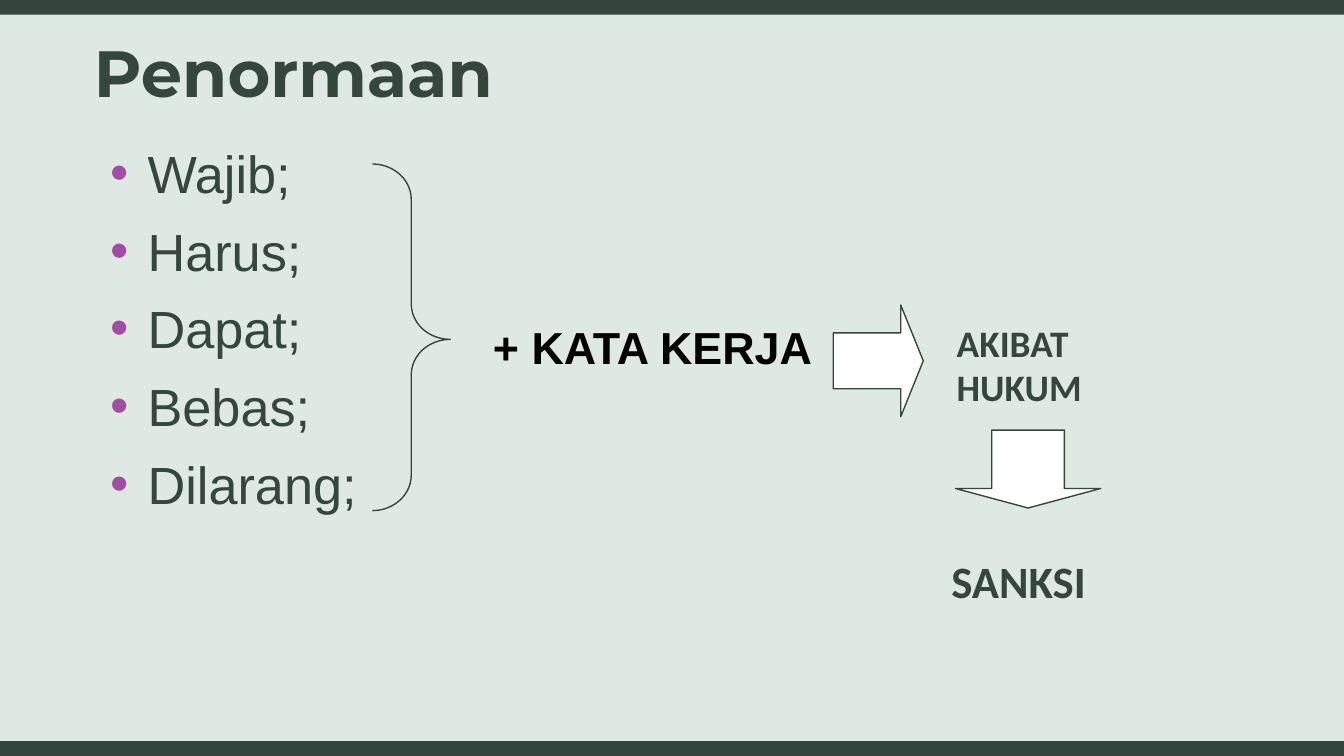
from lxml import etree
from pptx import Presentation
from pptx import util as u
from pptx.dml import color
from pptx.enum import shapes, text
from pptx.oxml import ns

HUES = {
    "back": "DEE9E3",
    "dark": "35463D",
    "dot": "A04DA3",
    "white": "FFFFFF",
    "black": "000000",
}
KIND = shapes.MSO_SHAPE
WIDE = 10
HIGH = WIDE * 9 / 16
BAR = 0.11


def hue(name):
    return color.RGBColor.from_string(HUES[name])


class Deck:
    def __init__(self):
        self.file = Presentation()
        self.file.slide_width = u.Inches(WIDE)
        self.file.slide_height = u.Inches(HIGH)
        self.slide = self.file.slides.add_slide(self.file.slide_layouts[6])
        fill = self.slide.background.fill
        fill.solid()
        fill.fore_color.rgb = hue("back")

    def shape(self, kind, box, fill=None, line=None, bends=()):
        item = self.slide.shapes.add_shape(kind, *map(u.Inches, box))
        item.shadow.inherit = False
        for i, bend in enumerate(bends):
            item.adjustments[i] = bend
        if fill:
            item.fill.solid()
            item.fill.fore_color.rgb = hue(fill)
        else:
            item.fill.background()
        if line:
            item.line.color.rgb = hue(line)
            item.line.width = u.Pt(0.75)
        else:
            item.line.fill.background()

    def arrow(self, kind, box):
        self.shape(kind, box, "white", "dark", (0.5, 0.25))

    def text(self, box, lines, size, font, tint="dark", bold=True,
             wrap=False, pad=0.05):
        frame = self.slide.shapes.add_textbox(*map(u.Inches, box)).text_frame
        frame.word_wrap = wrap
        frame.auto_size = (text.MSO_AUTO_SIZE.NONE if wrap
                           else text.MSO_AUTO_SIZE.SHAPE_TO_FIT_TEXT)
        frame.margin_top = frame.margin_bottom = u.Inches(pad)
        for i, line in enumerate(lines):
            para = frame.add_paragraph() if i else frame.paragraphs[0]
            run = para.add_run()
            run.text = line
            run.font.size = u.Pt(size)
            run.font.name = font
            run.font.bold = bold
            run.font.color.rgb = hue(tint)
        return frame

    def list(self, box, lines, size, font):
        frame = self.text(box, lines, size, font, bold=False, wrap=True, pad=0.1)
        for para in frame.paragraphs:
            para.line_spacing = 1.15
            para.space_before = u.Pt(3)
            props = para._p.get_or_add_pPr()
            props.set("marL", str(u.Inches(0.4)))
            props.set("indent", str(u.Inches(-0.28)))
            tint = etree.SubElement(props, ns.qn("a:buClr"))
            etree.SubElement(tint, ns.qn("a:srgbClr"), val=HUES["dot"])
            etree.SubElement(props, ns.qn("a:buFont"), typeface="Arial")
            etree.SubElement(props, ns.qn("a:buChar"), char="•")


def main():
    deck = Deck()
    for top in (HIGH - BAR, 0):
        deck.shape(KIND.RECTANGLE, (0, top, WIDE, BAR), "dark")

    deck.text((0.6, 0.14, 4.7, 0.74), ["Penormaan"], 35, "Montserrat",
              wrap=True, pad=0.1)
    norms = ["Wajib;", "Harus;", "Dapat;", "Bebas;", "Dilarang;"]
    deck.list((0.6, 0.88, 8.45, 2.31), norms, 28, "Arial")

    deck.shape(KIND.RIGHT_BRACE, (2.77, 1.22, 0.58, 2.58), line="dark",
               bends=(0.455, 0.506))
    deck.text((3.57, 2.33, 2.87, 0.51), ["+ KATA KERJA"], 24, "Arial", "black")
    deck.arrow(KIND.RIGHT_ARROW, (6.2, 2.27, 0.67, 0.83))
    deck.text((7.02, 2.33, 1.14, 0.77), ["AKIBAT", "HUKUM"], 20, "Calibri")
    deck.arrow(KIND.DOWN_ARROW, (7.11, 3.2, 1.08, 0.58))
    deck.text((6.98, 4.07, 1.21, 0.51), ["SANKSI"], 24, "Calibri")

    deck.file.save("out.pptx")


if __name__ == "__main__":
    main()
